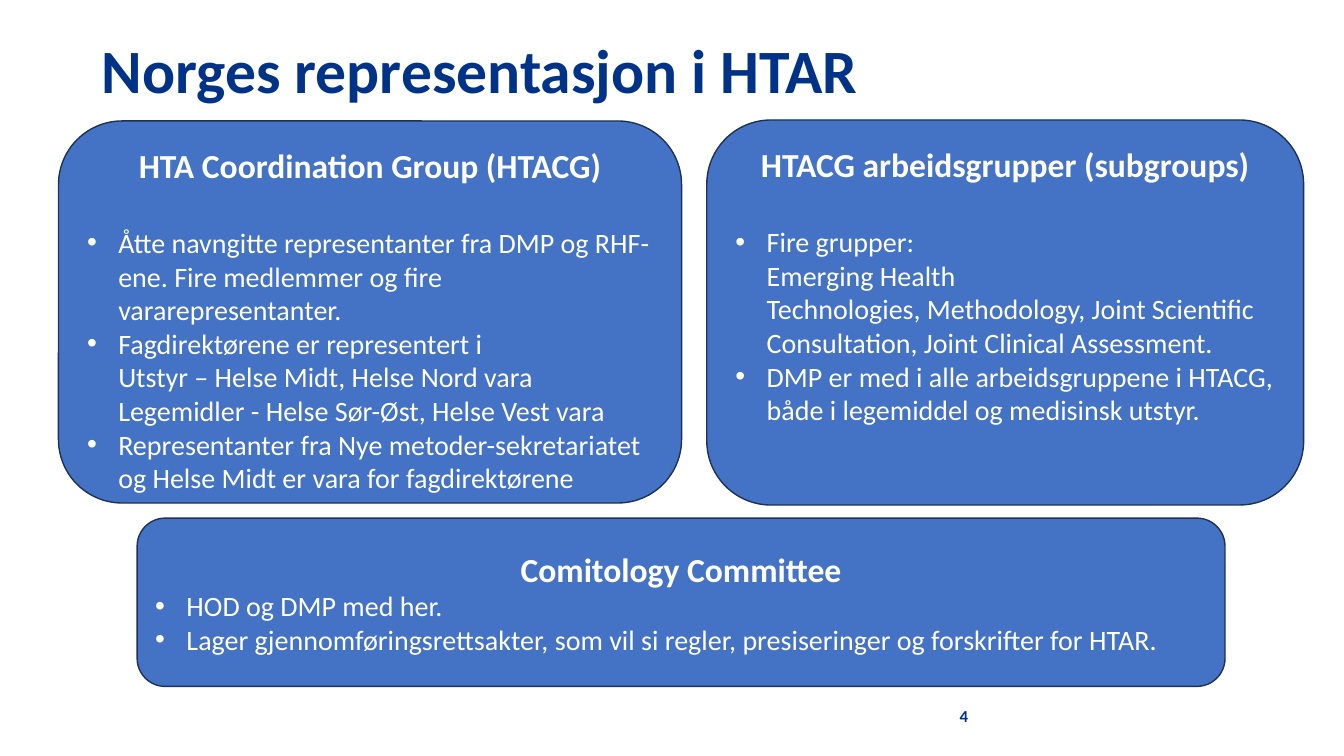
from lxml import etree
from pptx import Presentation
from pptx.dml.color import RGBColor
from pptx.enum.shapes import MSO_SHAPE
from pptx.enum.text import MSO_ANCHOR, PP_ALIGN
from pptx.oxml.ns import qn
from pptx.util import Emu, Pt

ROUND = MSO_SHAPE.ROUNDED_RECTANGLE
TOP, MIDDLE = MSO_ANCHOR.TOP, MSO_ANCHOR.MIDDLE
LEFT, CENTER = PP_ALIGN.LEFT, PP_ALIGN.CENTER
PX = 9144  # 100 px to the inch
HARD = chr(160)  # non-breaking space, typed as ~ in the texts below

THEME = {
    "font": "Calibri",
    "navy": RGBColor.from_string("003388"),
    "blue": RGBColor.from_string("4472C4"),
    "edge": RGBColor.from_string("1E3256"),
    "white": RGBColor.from_string("FFFFFF"),
    "title": 44, "head": 24, "body": 20, "page": 12,
}


def px(*sizes):
    return [Emu(size * PX) for size in sizes]


def write(para, text, size, color, bold, align=LEFT):
    para.text = text.replace("~", HARD)
    para.alignment = align
    for run in para.runs:
        run.font.name = THEME["font"]
        run.font.size = Pt(THEME[size])
        run.font.bold = bold
        run.font.color.rgb = THEME[color]


deck = Presentation()
deck.slide_width, deck.slide_height = px(1333, 750)
slide = deck.slides.add_slide(deck.slide_layouts[5])

title = slide.shapes.title
title.left, title.top, title.width, title.height = px(91, 0, 1150, 145)
title.text_frame.vertical_anchor = MIDDLE
para = title.text_frame.paragraphs[0]
write(para, "Norges representasjon i HTAR", "title", "navy", True)
para.line_spacing = 0.9

page = slide.shapes.add_textbox(*px(942, 695, 300, 40))
page.text_frame.word_wrap = True
write(page.text_frame.paragraphs[0], "4", "page", "navy", True)

# place, anchor, gap under the heading in points, heading, bullets
GROUPS = [
    ((58, 120, 618, 379), TOP, 29, "HTA Coordination Group (HTACG)", [
        "Åtte navngitte representanter fra DMP og RHF-ene. "
        "Fire medlemmer og fire vararepresentanter.",
        "Fagdirektørene er representert i\n"
        "Utstyr – Helse Midt,~Helse Nord~vara\n"
        "Legemidler -~Helse Sør-Øst,~Helse Vest vara",
        "Representanter fra Nye metoder-sekretariatet "
        "og Helse Midt er vara for fagdirektørene",
    ]),
    ((136, 514, 1079, 167), MIDDLE, 0, "Comitology~Committee", [
        "HOD og DMP med her.",
        "Lager gjennomføringsrettsakter, som~vil si~regler,~presiseringer~og "
        "forskrifter for HTAR.",
    ]),
    ((701, 119, 592, 382), TOP, 29, "HTACG~arbeidsgrupper~(subgroups)", [
        "Fire~grupper:\n"
        "Emerging Health Technologies,~Methodology, Joint Scientific "
        "Consultation, Joint~Clinical Assessment.",
        "DMP er med i alle arbeidsgruppene i HTACG, "
        "både~i~legemiddel~og~medisinsk~utstyr.",
    ]),
]

for place, anchor, gap, head, points in GROUPS:
    box = slide.shapes.add_shape(ROUND, *px(*place))
    box.shadow.inherit = False
    box.fill.solid()
    box.fill.fore_color.rgb = THEME["blue"]
    box.line.color.rgb = THEME["edge"]
    box.line.width = Pt(1)
    frame = box.text_frame
    frame.word_wrap = True
    frame.vertical_anchor = anchor
    para = frame.paragraphs[0]
    write(para, head, "head", "white", True, CENTER)
    para.space_after = Pt(gap)
    for point in points:
        para = frame.add_paragraph()
        write(para, point, "body", "white", False)
        props = para._p.get_or_add_pPr()
        props.set("marL", str(31 * PX))
        props.set("indent", str(-31 * PX))
        etree.SubElement(props, qn("a:buFont"), typeface="Arial")
        etree.SubElement(props, qn("a:buChar"), char="•")

deck.save("out.pptx")
